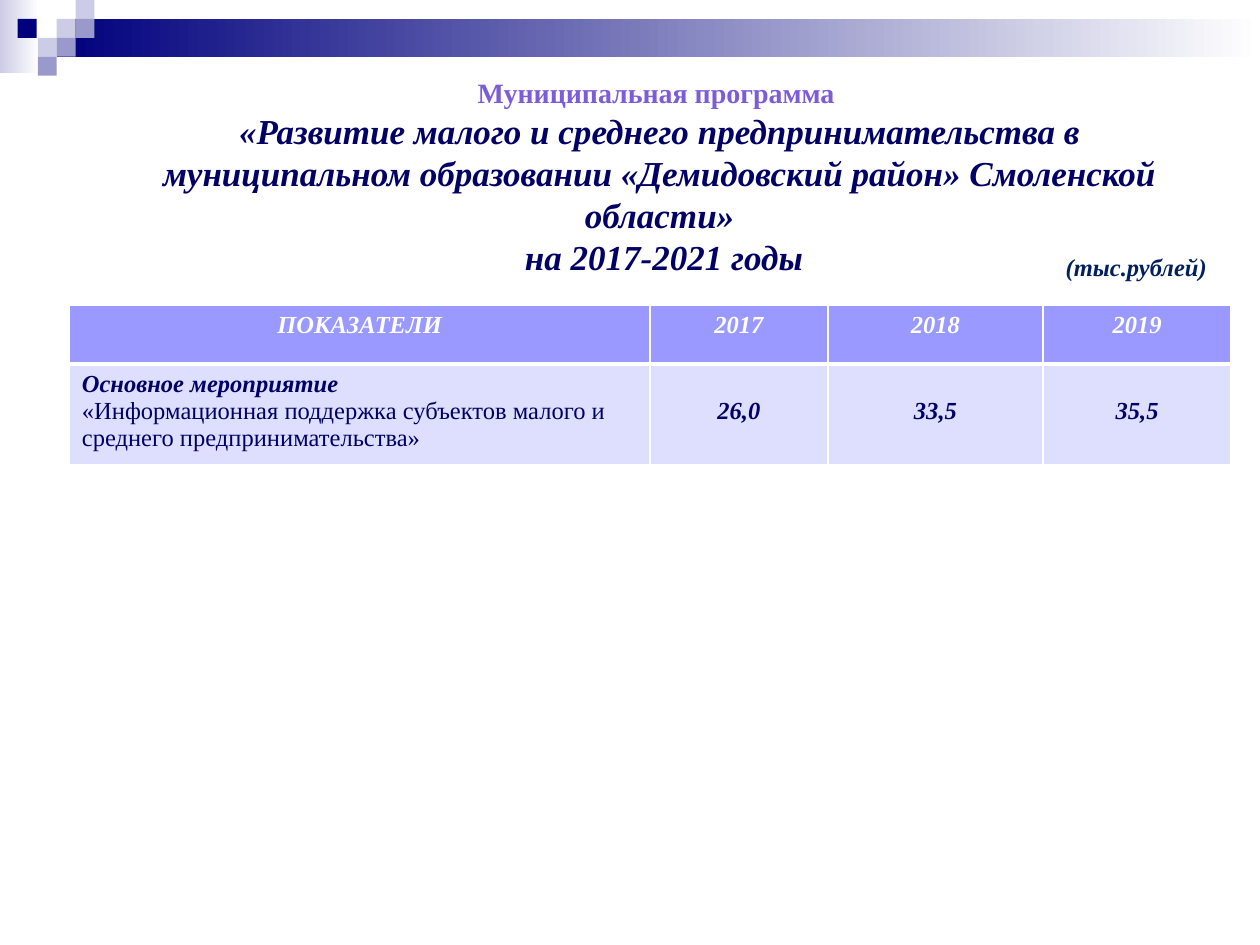
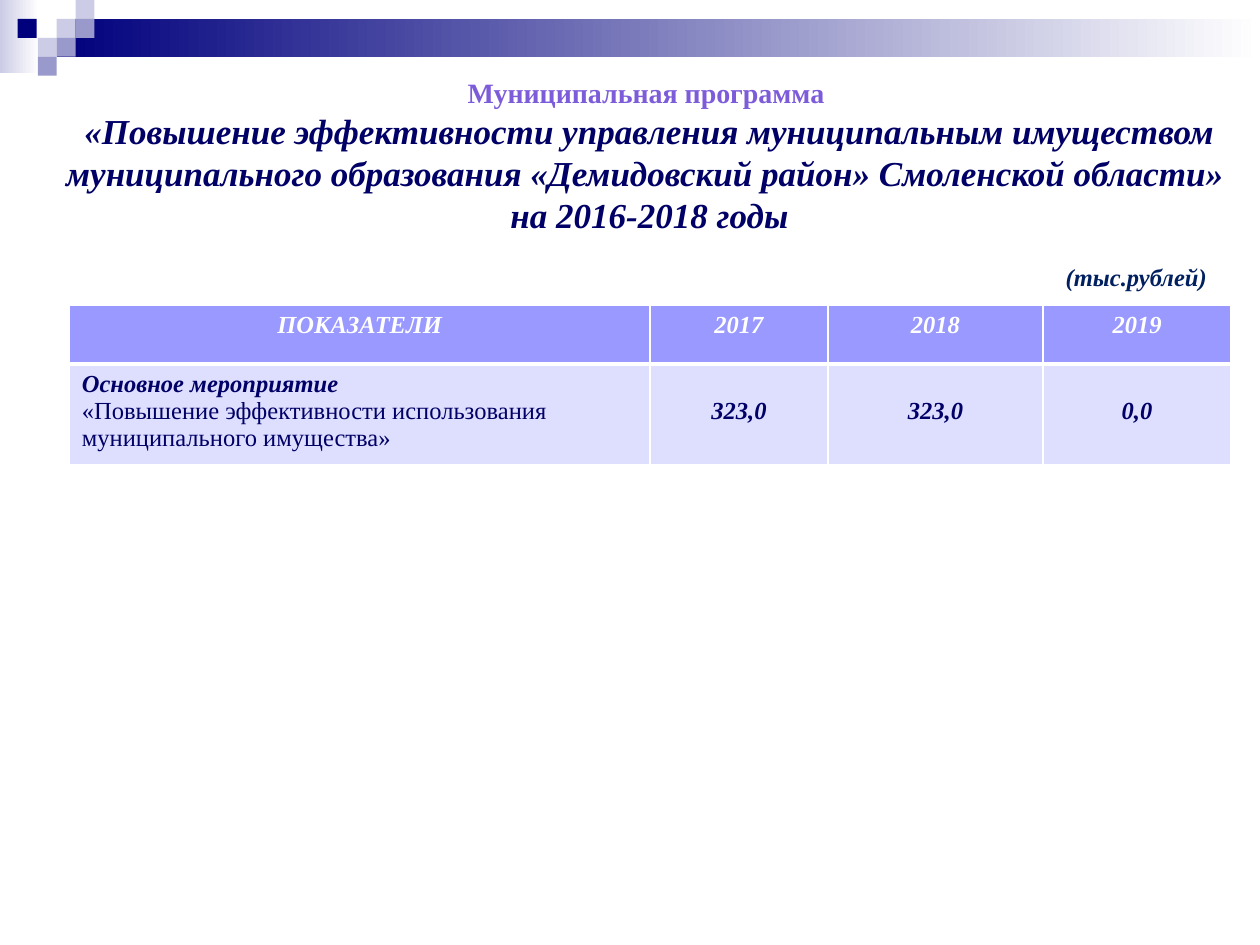
import pptx
import pptx.util
import pptx.dml.color
import pptx.enum.shapes
import pptx.enum.text
import pptx.oxml

Inches = pptx.util.Inches
Pt = pptx.util.Pt
CENTER = pptx.enum.text.PP_ALIGN.CENTER
RECT = pptx.enum.shapes.MSO_SHAPE.RECTANGLE

NAVY, WHITE = "00007D", "FFFFFF"
PALE, MID = "CCCCE6", "9999CC"
INK, LILAC, UNIT = "000066", "7D5CDA", "002060"
HEAD, BODY = "9999FF", "DEDEFF"
FONT = "Times New Roman"
STEP = 0.15
BANDS = [
    (0, 0, 0.31, 0.58, PALE),
    (0.45, 0.15, 9.55, 0.3, NAVY),
]
TILES = [
    (0.45, 0.15, PALE),
    (0.6, 0, PALE),
    (0.6, 0.15, MID),
    (0.3, 0.3, PALE),
    (0.14, 0.15, NAVY),
    (0.45, 0.3, MID),
    (0.3, 0.45, MID),
]
COLS = [4.61, 1.41, 1.71, 1.49]
ROWS = [0.47, 0.78]
YEARS = ["ПОКАЗАТЕЛИ", "2017", "2018", "2019"]
PAGES = [
    {
        "box": (0.78, 8.91),
        "name": "«Развитие малого и среднего предпринимательства в муниципальном образовании «Демидовский район» Смоленской области»",
        "term": " на 2017-2021 годы",
        "unit": 1.95,
        "task": "«Информационная поддержка субъектов малого и среднего предпринимательства»",
        "sums": ["26,0", "33,5", "35,5"],
    },
    {
        "box": (0.31, 9.69),
        "name": "«Повышение эффективности управления муниципальным имуществом муниципального образования «Демидовский район» Смоленской области» ",
        "term": "на 2016-2018 годы",
        "unit": 2.03,
        "task": "«Повышение эффективности использования муниципального имущества»",
        "sums": ["323,0", "323,0", "0,0"],
    },
]


def paint(code):
    return pptx.dml.color.RGBColor.from_string(code)


def write(para, text, size, color, bold=True, slant=True, align=None):
    para.alignment = align
    run = para.add_run()
    run.text = text
    font = run.font
    font.name, font.size = FONT, Pt(size)
    font.bold, font.italic = bold, slant
    font.color.rgb = paint(color)


deck = pptx.Presentation()
deck.slide_width, deck.slide_height = Inches(10), Inches(7.5)

for page in PAGES:
    slide = deck.slides.add_slide(deck.slide_layouts[6])
    shapes = slide.shapes

    for left, top, wide, high, color in BANDS:
        band = shapes.add_shape(RECT, Inches(left), Inches(top), Inches(wide), Inches(high))
        band.shadow.inherit = False
        band.line.fill.background()
        band.fill.gradient()
        band.fill.gradient_angle = 0
        for stop, place, tone in zip(band.fill.gradient_stops, (0, 1), (color, WHITE)):
            stop.position = place
            stop.color.rgb = paint(tone)

    for left, top, color in TILES:
        tile = shapes.add_shape(RECT, Inches(left), Inches(top), Inches(STEP), Inches(STEP))
        tile.shadow.inherit = False
        tile.line.fill.background()
        tile.fill.solid()
        tile.fill.fore_color.rgb = paint(color)

    left, wide = page["box"]
    title = shapes.add_textbox(Inches(left), Inches(0.55), Inches(wide), Inches(1.72)).text_frame
    title.word_wrap = True
    write(title.paragraphs[0], "Муниципальная программа ", 16, LILAC, slant=False, align=CENTER)
    for text in (page["name"], page["term"]):
        write(title.add_paragraph(), text, 20, INK, align=CENTER)

    grid = shapes.add_table(2, 4, Inches(0.55), Inches(2.42), Inches(sum(COLS)), Inches(sum(ROWS))).table
    for col, wide in zip(grid.columns, COLS):
        col.width = Inches(wide)
    for row, high in zip(grid.rows, ROWS):
        row.height = Inches(high)

    for r, line in enumerate([YEARS, ["Основное мероприятие"] + page["sums"]]):
        for c, text in enumerate(line):
            cell = grid.cell(r, c)
            cell.fill.solid()
            cell.fill.fore_color.rgb = paint(BODY if r else HEAD)
            first = r == 1 and c == 0
            para = cell.text_frame.paragraphs[0]
            write(para, text, 14, INK if r else WHITE, align=None if first else CENTER)
            if first:
                write(cell.text_frame.add_paragraph(), page["task"], 14, INK, bold=False, slant=False)
            elif r:
                cell.margin_top = Inches(0.27)
            thick = "T" if r else "B"
            for n, side in enumerate("LRTB"):
                edge = pptx.oxml.parse_xml(
                    '<a:ln%s xmlns:a="http://schemas.openxmlformats.org/drawingml/2006/main" w="%d">'
                    '<a:solidFill><a:srgbClr val="%s"/></a:solidFill></a:ln%s>'
                    % (side, Pt(3 if side == thick else 1), WHITE, side)
                )
                cell._tc.get_or_add_tcPr().insert(n, edge)

    unit = shapes.add_textbox(Inches(8.36), Inches(page["unit"]), Inches(1.33), Inches(0.34)).text_frame
    unit.word_wrap = False
    write(unit.paragraphs[0], "(тыс.рублей)", 14, UNIT)

deck.save("out.pptx")
